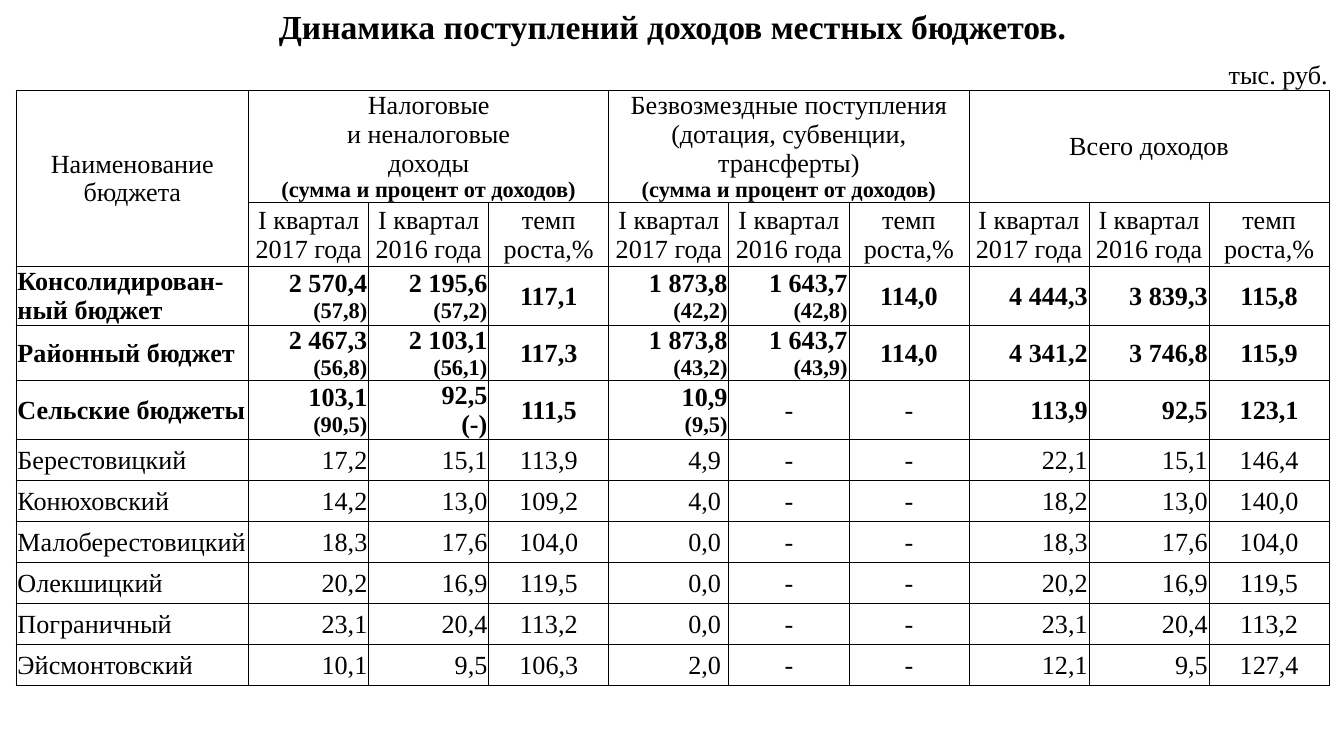
from dataclasses import dataclass

from lxml.etree import SubElement
from pptx import Presentation
from pptx.dml.color import RGBColor
from pptx.enum.text import MSO_ANCHOR, PP_ALIGN
from pptx.oxml.ns import qn
from pptx.table import Table, _Cell
from pptx.util import Inches, Pt

BLACK = RGBColor(0, 0, 0)
TABLE_WIDTH = 9.77
NAME_WIDTH = 1.73
VILLAGE_COUNT = 6
VILLAGES_HEIGHT = 1.83
ROW_HEIGHTS = [0.32, 0.32, 0.83, 0.47, 0.44, 0.41, 0.44]
ROW_HEIGHTS += [VILLAGES_HEIGHT / VILLAGE_COUNT] * VILLAGE_COUNT
COLUMN_COUNT = 10
GROWTH_COLUMNS = (3, 6, 9)
FIRST_BUDGET_ROW = 4
TOTALS_COUNT = 3
ALL_SIDES = "LRTB"
CELL_FORMAT = {
    "margin_left": Inches(0.01),
    "margin_right": Inches(0.01),
    "margin_top": Inches(0.01),
    "margin_bottom": Inches(0),
}
SHARE_NOTE = "(сумма и процент от доходов)"
QUARTERS = ["I квартал 2017 года", "I квартал 2016 года", "темп\nроста,%"]


@dataclass
class Heading:
    row: int
    column: int
    text: str
    last_row: int
    last_column: int
    size: int = 14
    bold: bool = False
    align: PP_ALIGN = PP_ALIGN.CENTER
    anchor: MSO_ANCHOR = MSO_ANCHOR.MIDDLE


HEADINGS = [
    Heading(0, 0, "Динамика поступлений доходов местных бюджетов.", 0, 9,
            size=18, bold=True, anchor=MSO_ANCHOR.BOTTOM),
    Heading(1, 1, "", 1, 2),
    Heading(1, 3, "", 1, 4),
    Heading(1, 5, "", 1, 6),
    Heading(1, 9, "тыс. руб.", 1, 9, align=PP_ALIGN.RIGHT, anchor=MSO_ANCHOR.BOTTOM),
    Heading(2, 0, "Наименование бюджета", 3, 0),
    Heading(2, 1, f"Налоговые\nи неналоговые\nдоходы\n{SHARE_NOTE}", 2, 3),
    Heading(2, 4, f"Безвозмездные поступления (дотация, субвенции, трансферты)\n{SHARE_NOTE}", 2, 6),
    Heading(2, 7, "Всего доходов", 2, 9),
] + [Heading(3, column, text, 3, column) for column, text in enumerate(QUARTERS * 3, 1)]

BUDGETS = [
    ["Консолидирован-ный бюджет", "2 570,4\n(57,8)", "2 195,6\n(57,2)", "117,1",
     "1 873,8\n(42,2)", "1 643,7\n(42,8)", "114,0", "4 444,3", "3 839,3", "115,8"],
    ["Районный бюджет", "2 467,3\n(56,8)", "2 103,1\n(56,1)", "117,3",
     "1 873,8\n(43,2)", "1 643,7\n(43,9)", "114,0", "4 341,2", "3 746,8", "115,9"],
    ["Сельские бюджеты", "103,1\n(90,5)", "92,5\n(-)", "111,5",
     "10,9\n(9,5)", "-", "-", "113,9", "92,5", "123,1"],
    ["Берестовицкий", "17,2", "15,1", "113,9", "4,9 ", "-", "-", "22,1", "15,1", "146,4"],
    ["Конюховский", "14,2", "13,0", "109,2", "4,0 ", "-", "-", "18,2", "13,0", "140,0"],
    ["Малоберестовицкий", "18,3", "17,6", "104,0", "0,0 ", "-", "-", "18,3", "17,6", "104,0"],
    ["Олекшицкий", "20,2", "16,9", "119,5", "0,0 ", "-", "-", "20,2", "16,9", "119,5"],
    ["Пограничный", "23,1", "20,4", "113,2", "0,0 ", "-", "-", "23,1", "20,4", "113,2"],
    ["Эйсмонтовский", "10,1", "9,5", "106,3", "2,0 ", "-", "-", "12,1", "9,5", "127,4"],
]


def set_borders(cell: _Cell, visible_sides: str) -> None:
    properties = cell._tc.get_or_add_tcPr()
    for side in ALL_SIDES:
        border = SubElement(properties, qn(f"a:ln{side}"), w=str(Pt(0.5)))
        if side in visible_sides:
            color = SubElement(border, qn("a:solidFill"))
            SubElement(color, qn("a:srgbClr"), val=str(BLACK))
        else:
            SubElement(border, qn("a:noFill"))


def format_cells(table: Table) -> None:
    for row in range(len(ROW_HEIGHTS)):
        sides = ("", "B")[row] if row < 2 else ALL_SIDES
        for column in range(COLUMN_COUNT):
            cell = table.cell(row, column)
            set_borders(cell, sides)
            cell.fill.background()
            for name, value in CELL_FORMAT.items():
                setattr(cell, name, value)


def write(cell: _Cell, text: str, size: int, bold: bool, align: PP_ALIGN,
          anchor: MSO_ANCHOR = MSO_ANCHOR.MIDDLE) -> None:
    cell.vertical_anchor = anchor
    cell.text = text
    for paragraph in cell.text_frame.paragraphs:
        paragraph.alignment = align
        for run in paragraph.runs:
            is_share = run.text.startswith("(") and run.text != "(-)"
            font_format = {
                "name": "Times New Roman",
                "size": Pt(12 if is_share else size),
                "bold": bold or is_share,
            }
            for name, value in font_format.items():
                setattr(run.font, name, value)
            run.font.color.rgb = BLACK


def write_heading(table: Table, heading: Heading) -> None:
    cell = table.cell(heading.row, heading.column)
    last = table.cell(heading.last_row, heading.last_column)
    if (heading.row, heading.column) != (heading.last_row, heading.last_column):
        cell.merge(last)
    write(cell, heading.text, heading.size, heading.bold, heading.align, heading.anchor)


def budget_alignment(column: int, text: str) -> PP_ALIGN:
    if column == 0:
        return PP_ALIGN.LEFT
    if column in GROWTH_COLUMNS or text == "-":
        return PP_ALIGN.CENTER
    return PP_ALIGN.RIGHT


def write_budgets(table: Table) -> None:
    for index, budget in enumerate(BUDGETS):
        for column, text in enumerate(budget):
            bold = index < TOTALS_COUNT and text != "-"
            write(table.cell(FIRST_BUDGET_ROW + index, column), text, 14, bold,
                  budget_alignment(column, text))


def main() -> None:
    presentation = Presentation()
    presentation.slide_width = Inches(10)
    presentation.slide_height = Inches(10) * 9 // 16
    slide = presentation.slides.add_slide(presentation.slide_layouts[6])
    revenues = slide.shapes.add_table(
        len(ROW_HEIGHTS), COLUMN_COUNT, Inches(0.12), Inches(0.03),
        Inches(TABLE_WIDTH), Inches(sum(ROW_HEIGHTS))).table
    revenues.first_row = False
    revenues.horz_banding = False
    value_width = (TABLE_WIDTH - NAME_WIDTH) / (COLUMN_COUNT - 1)
    for index, column in enumerate(revenues.columns):
        column.width = Inches(value_width if index else NAME_WIDTH)
    for row, height in zip(revenues.rows, ROW_HEIGHTS):
        row.height = Inches(height)
    format_cells(revenues)
    for heading in HEADINGS:
        write_heading(revenues, heading)
    write_budgets(revenues)
    presentation.save("out.pptx")


if __name__ == "__main__":
    main()
